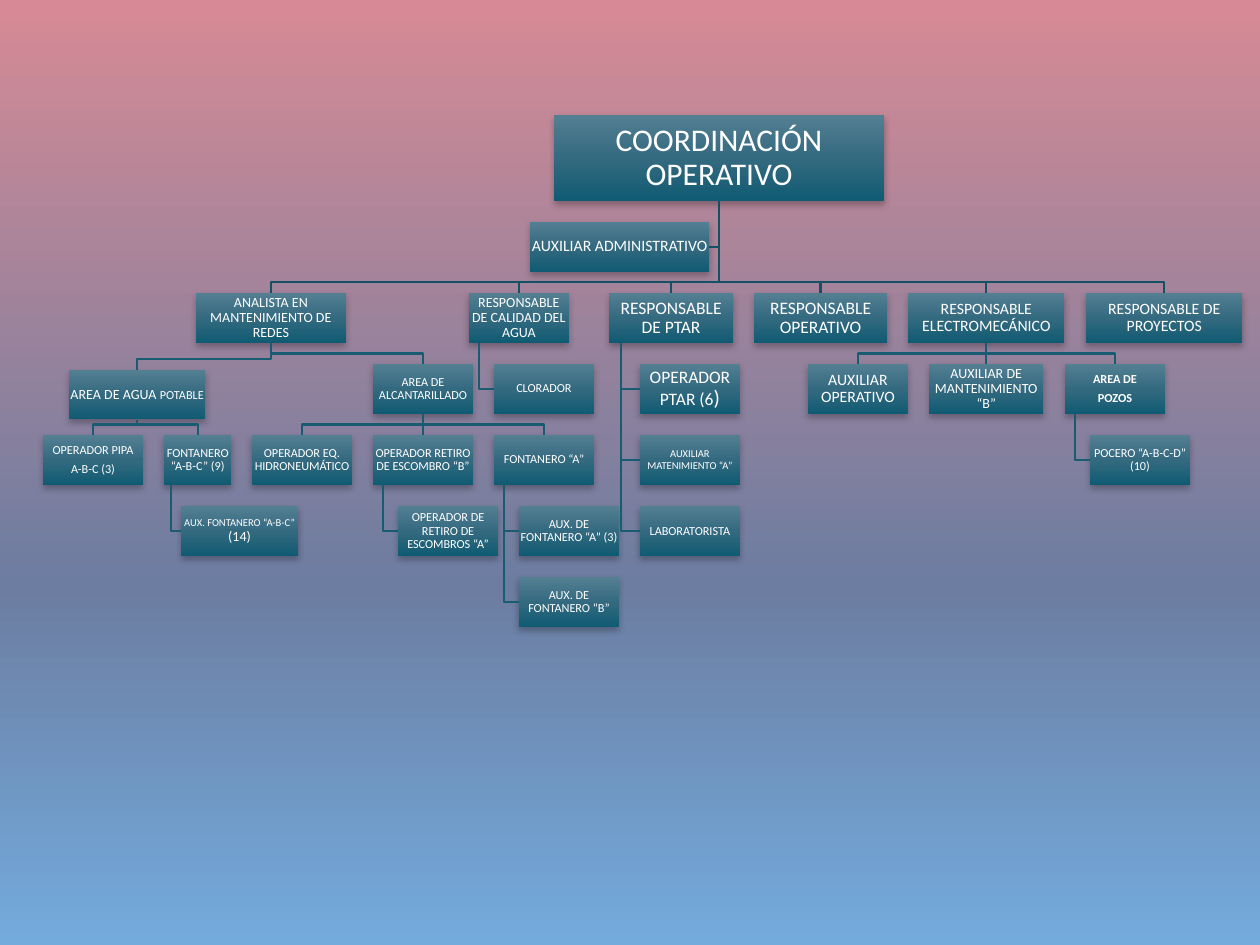
from lxml import etree
from pptx import Presentation
from pptx.dml.color import RGBColor
from pptx.enum import shapes, text
from pptx.oxml.ns import qn
from pptx.util import Pt

HUES = {
    "rose": "D78A95", "slate": "6C7DA1", "sky": "73ABDD",
    "light": "547F93", "mid": "346A80", "deep": "105B73",
    "trunk": "165063", "branch": "195B70", "white": "FFFFFF", "black": "000000",
}
TALL, HIGH, WIDE = 49.1, 28.5, 57.1
FIRST, PITCH, BUS = 61.1, 40.6, 6

# name, parent, link, left, width, row, paragraphs of size and wording
NODES = [
    ("root", None, None, 292, 188.6, None, [18, "COORDINACIÓN OPERATIVO"]),
    ("admin", "root", "aide", 278.3, 102.3, 0, [9, "AUXILIAR ADMINISTRATIVO"]),
    ("nets", "root", "tree", 87.4, 85.7, 1, [8, "ANALISTA EN MANTENIMIENTO DE REDES"]),
    ("grade", "root", "tree", 243.4, WIDE, 1, [8, "RESPONSABLE DE CALIDAD DEL AGUA"]),
    ("ptar", "root", "tree", 323.4, 70.9, 1, [10, "RESPONSABLE DE PTAR"]),
    ("oper", "root", "tree", 406.3, 76, 1, [10, "RESPONSABLE OPERATIVO"]),
    ("electro", "root", "tree", 494.3, 89.4, 1, [9, "RESPONSABLE ELECTROMECÁNICO"]),
    ("project", "root", "tree", 596, 89.4, 1, [9, "RESPONSABLE DE PROYECTOS"]),
    ("water", "nets", "tree", 14.9, 77.7, 2.08, [8, "AREA DE AGUA ", 7, "POTABLE"]),
    ("sewer", "nets", "tree", 188.6, WIDE, 2, [7, "AREA DE ALCANTARILLADO"]),
    ("chlorine", "grade", "hang", 257.7, WIDE, 2, [7, "CLORADOR"]),
    ("plant", "ptar", "hang", 341.1, WIDE, 2, [10, "OPERADOR PTAR (6", 12, ")"]),
    ("mender", "ptar", "hang", 341.1, WIDE, 3, [6, "AUXILIAR MATENIMIENTO “A”"]),
    ("lab", "ptar", "hang", 341.1, WIDE, 4, [7, "LABORATORISTA"]),
    ("helper", "electro", "tree", 437.1, WIDE, 2, [9, "AUXILIAR OPERATIVO"]),
    ("upkeep", "electro", "tree", 506.3, 65.4, 2, [8, "AUXILIAR DE MANTENIMIENTO “B”"]),
    ("wells", "electro", "tree", 584, WIDE, 2, [7, "AREA DE"], [7, "POZOS"]),
    ("pipe", "water", "tree", 0, WIDE, 3, [7, "OPERADOR PIPA"], [7, "A-B-C (3)"]),
    ("plumber", "water", "tree", 69.1, 38.6, 3, [7, "FONTANERO “A-B-C” (9)"]),
    ("mate", "plumber", "hang", 78.9, 66.9, 4, [6, "AUX. FONTANERO “A-B-C”", 8, "\v(14)"]),
    ("hydro", "sewer", "tree", 119.4, WIDE, 3, [7, "OPERADOR EQ. HIDRONEUMÁTICO"]),
    ("debris", "sewer", "tree", 188.6, WIDE, 3, [7, "OPERADOR RETIRO DE ESCOMBRO “B”"]),
    ("fitter", "sewer", "tree", 257.7, WIDE, 3, [7, "FONTANERO “A”"]),
    ("hauler", "debris", "hang", 202.9, WIDE, 4, [7, "OPERADOR DE RETIRO DE ESCOMBROS “A”"]),
    ("junior", "fitter", "hang", 272, WIDE, 4, [7, "AUX. DE FONTANERO “A” (3)"]),
    ("novice", "fitter", "hang", 272, WIDE, 5, [7, "AUX. DE FONTANERO “B”"]),
    ("digger", "wells", "hang", 598.3, WIDE, 3, [7, "POCERO “A-B-C-D” (10)"]),
]


def tint(name):
    """Return the colour of the given name."""
    return RGBColor.from_string(HUES[name])


def blend(fill, root, stops):
    """Give a fill a downward gradient with the given stops."""
    fill.gradient()
    fill.gradient_angle = 270
    rail = next(root.iter(qn("a:gsLst")))
    for old in list(rail):
        rail.remove(old)
    for spot, name in stops:
        stop = etree.SubElement(rail, qn("a:gs"), pos=str(spot * 1000))
        etree.SubElement(stop, qn("a:srgbClr"), val=HUES[name])


def shade(shape):
    """Add a soft shadow below a shape."""
    shape.shadow.inherit = False
    glow = etree.SubElement(
        shape.element.spPr.find(qn("a:effectLst")), qn("a:outerShdw"),
        blurRad=str(Pt(4)), dist=str(Pt(2)), dir="5400000", rotWithShape="0")
    ink = etree.SubElement(glow, qn("a:srgbClr"), val=HUES["black"])
    etree.SubElement(ink, qn("a:alpha"), val="28000")


def write(frame, paras, bold):
    """Fill a text frame with centred paragraphs."""
    frame.word_wrap = True
    frame.vertical_anchor = text.MSO_ANCHOR.MIDDLE
    inset = Pt(paras[0][0] * 0.06)
    frame.margin_left = frame.margin_right = inset
    frame.margin_top = frame.margin_bottom = inset
    for i, parts in enumerate(paras):
        para = frame.add_paragraph() if i else frame.paragraphs[0]
        para.alignment = text.PP_ALIGN.CENTER
        para.line_spacing = 0.9
        para.space_after = Pt(parts[0] * 0.42)
        for size, words in zip(parts[::2], parts[1::2]):
            if words.startswith("\v"):
                para.add_line_break()
            run = para.add_run()
            run.text = words.lstrip("\v")
            font = run.font
            font.name, font.size, font.bold = "Calibri", Pt(size), bold
            font.color.rgb = tint("white")


def card(slide, left, top, width, height, paras, bold):
    """Draw one post of the chart."""
    box = slide.shapes.add_shape(
        shapes.MSO_SHAPE.RECTANGLE, Pt(left), Pt(top), Pt(width), Pt(height))
    blend(box.fill, box.element, [(0, "light"), (50, "mid"), (100, "deep")])
    box.line.fill.background()
    shade(box)
    write(box.text_frame, paras, bold)
    return box


def link(slide, boss, post, kind, hue):
    """Join a post to the one above it."""
    base, mid = boss.top + boss.height, boss.left + boss.width // 2
    side, axis = post.top + post.height // 2, post.left + post.width // 2
    if kind == "tree" and abs(mid - axis) < Pt(1):
        line = slide.shapes.add_connector(
            shapes.MSO_CONNECTOR.STRAIGHT, mid, base, axis, post.top)
        line.begin_connect(boss, 2)
        line.end_connect(post, 0)
        etree.SubElement(line.element.spPr, qn("a:effectLst"))
    else:
        bus, stem = post.top - Pt(BUS), boss.left + boss.width // 10
        dots = {
            "tree": [(mid, base), (mid, bus), (axis, bus), (axis, post.top)],
            "hang": [(stem, base), (stem, side), (post.left, side)],
            "aide": [(mid, base), (mid, side), (post.left + post.width, side)],
        }[kind]
        trail = slide.shapes.build_freeform(*dots[0])
        trail.add_line_segments(dots[1:], close=False)
        line = trail.convert_to_shape()
        line.fill.background()
        line.shadow.inherit = False
    line.line.color.rgb = tint(hue)
    line.line.width = Pt(1.25)


def chart(slide, left, top):
    """Draw all posts and their links from the given corner."""
    cards = {}
    for name, _, _, x, width, row, *paras in NODES:
        y, height = (0, TALL) if row is None else (FIRST + row * PITCH, HIGH)
        cards[name] = card(slide, left + x, top + y, width, height,
                           paras, name == "wells")
    for name, boss, kind, *_ in NODES:
        if boss:
            hue = "trunk" if boss == "root" else "branch"
            link(slide, cards[boss], cards[name], kind, hue)


def main():
    """Build the deck and save it."""
    deck = Presentation()
    deck.slide_width, deck.slide_height = Pt(720), Pt(540)
    slide = deck.slides.add_slide(deck.slide_layouts[6])
    blend(slide.background.fill, slide.element,
          [(0, "rose"), (62, "slate"), (100, "sky")])
    chart(slide, 24.6, 65.7)
    deck.save("out.pptx")


if __name__ == "__main__":
    main()
